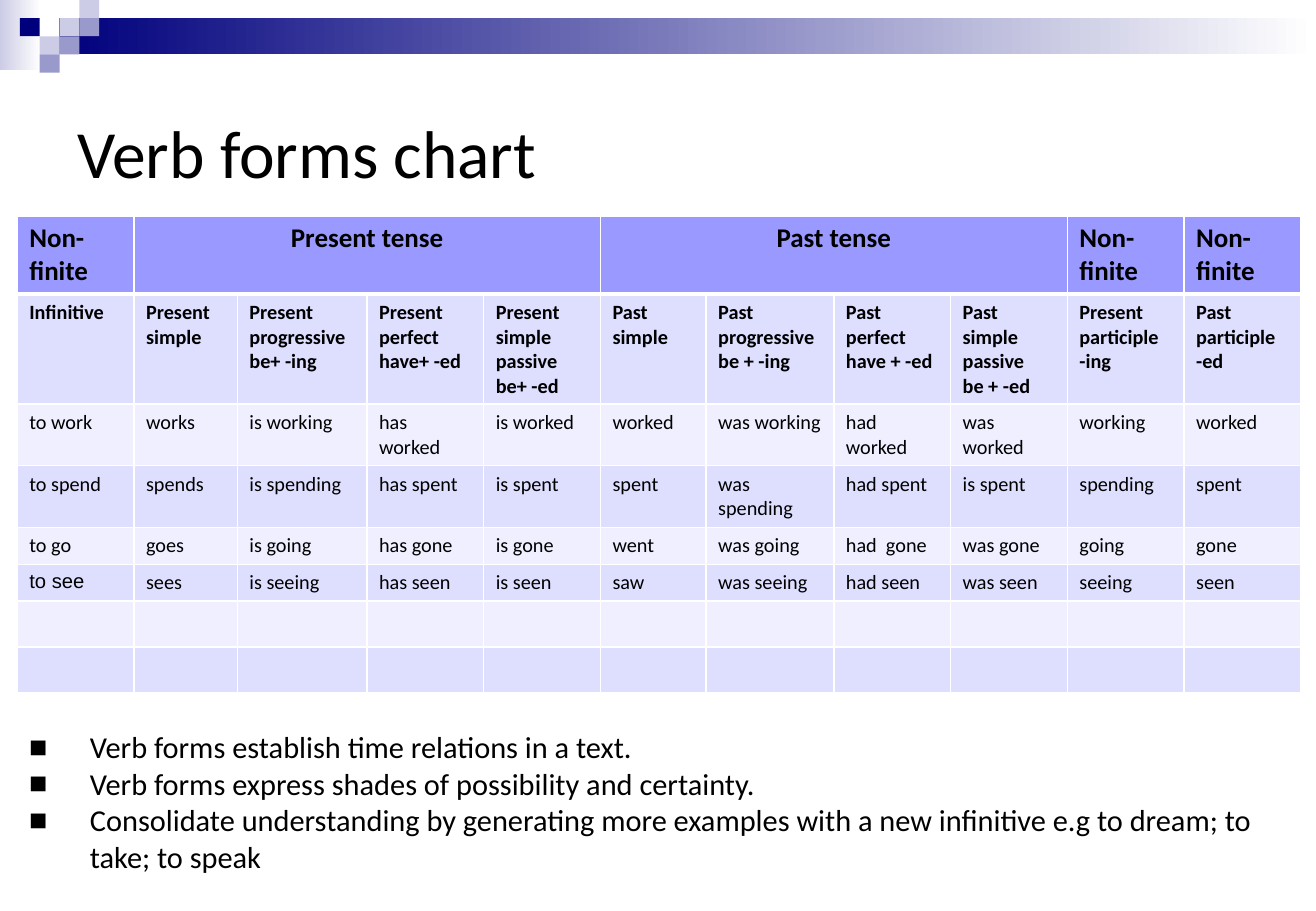
from lxml import etree
from pptx import Presentation
from pptx.dml.color import RGBColor
from pptx.enum import shapes, text
from pptx.oxml import ns
from pptx.util import Cm, Pt

COLORS = {
    "navy": "00007D", "lilac": "CCCCE6", "violet": "9999CC", "white": "FFFFFF",
    "black": "000000", "header": "9999FF", "dark band": "DEDEFF", "light band": "EFEFFF",
}


def rectangle(left, top, width, height, *fills):
    """Draw a borderless rectangle: one fill is solid, two make a gradient."""
    box = slide.shapes.add_shape(
        shapes.MSO_SHAPE.RECTANGLE, Cm(left), Cm(top), Cm(width), Cm(height))
    box.shadow.inherit = False
    box.line.fill.background()
    if len(fills) == 1:
        box.fill.solid()
        box.fill.fore_color.rgb = RGBColor.from_string(COLORS[fills[0]])
        return
    box.fill.gradient()
    box.fill.gradient_angle = 0
    for stop, name, position in zip(box.fill.gradient_stops, fills, (0, 1)):
        stop.color.rgb = RGBColor.from_string(COLORS[name])
        stop.position = position


def write(frame, wording, size, **formats):
    """Write one paragraph per line of the wording."""
    formats = {"name": "Calibri", "size": Pt(size), **formats}
    frame.word_wrap = True
    for number, line in enumerate(wording.split("\n")):
        paragraph = frame.paragraphs[0] if number == 0 else frame.add_paragraph()
        run = paragraph.add_run()
        run.text = line
        run.font.color.rgb = RGBColor.from_string(COLORS["black"])
        for attribute, value in formats.items():
            setattr(run.font, attribute, value)


deck = Presentation()
deck.slide_width, deck.slide_height = Cm(27.51), Cm(19.05)
slide = deck.slides.add_slide(deck.slide_layouts[6])

# Banner: two gradients and a mosaic of squares
rectangle(0, 0, 0.86, 1.47, "lilac", "white")
rectangle(1.24, 0.38, 26.27, 0.76, "navy", "white")
TILE_WIDTH, TILE_HEIGHT = 0.415, 0.38
mosaic = [(3, 1, "lilac"), (4, 0, "lilac"), (4, 1, "violet"), (2, 2, "lilac"),
          (1, 1, "navy"), (3, 2, "violet"), (2, 3, "violet")]
for column, row, color in mosaic:
    rectangle(column * TILE_WIDTH, row * TILE_HEIGHT, TILE_WIDTH, TILE_HEIGHT, color)

# Title
title = slide.shapes.add_textbox(Cm(1.37), Cm(1.27), Cm(24.77), Cm(3.81)).text_frame
title.vertical_anchor = text.MSO_ANCHOR.MIDDLE
write(title, "Verb forms chart", 40)

# Verb table
verb_forms = [
    ["Non-finite", "Present tense", "", "", "", "Past tense", "", "", "",
     "Non-finite", "Non-finite"],
    ["Infinitive", "Present simple", "Present progressive\nbe+ -ing",
     "Present perfect\nhave+ -ed", "Present simple passive\nbe+ -ed", "Past simple",
     "Past progressive\nbe + -ing", "Past perfect\nhave + -ed",
     "Past simple passive\nbe + -ed", "Present participle\n-ing", "Past participle\n-ed"],
    ["to work", "works", "is working", "has worked", "is worked", "worked",
     "was working", "had worked", "was worked", "working", "worked"],
    ["to spend", "spends", "is spending", "has spent", "is spent", "spent",
     "was spending", "had spent", "is spent", "spending", "spent"],
    ["to go", "goes", "is going", "has gone", "is gone", "went",
     "was going", "had  gone", "was gone", "going", "gone"],
    ["to see", "sees", "is seeing", "has seen", "is seen", "saw",
     "was seeing", "had seen", "was seen", "seeing", "seen"],
    [""] * 11,
    [""] * 11,
]
column_widths = [2.44, 2.16, 2.71, 2.44, 2.44, 2.21, 2.67, 2.44, 2.44, 2.44, 2.44]
row_heights = [1.63, 2.3, 1.29, 1.29, 0.77, 0.77, 0.96, 0.96]
verbs = slide.shapes.add_table(
    len(row_heights), len(column_widths), Cm(0.36), Cm(4.52),
    Cm(sum(column_widths)), Cm(sum(row_heights))).table
for column, width in zip(verbs.columns, column_widths):
    column.width = Cm(width)
for row, height in zip(verbs.rows, row_heights):
    row.height = Cm(height)
for first in (1, 5):
    verbs.cell(0, first).merge(verbs.cell(0, first + 3))

for r, forms in enumerate(verb_forms):
    band = "header" if r == 0 else "dark band" if r % 2 else "light band"
    for c, form in enumerate(forms):
        cell = verbs.cell(r, c)
        # White borders, thicker under the header
        properties = cell._tc.get_or_add_tcPr()
        for side in "LRTB":
            thick = (r, side) in ((0, "B"), (1, "T"))
            line = etree.SubElement(properties, ns.qn(f"a:ln{side}"), w=str(Pt(3 if thick else 1)))
            solid = etree.SubElement(line, ns.qn("a:solidFill"))
            etree.SubElement(solid, ns.qn("a:srgbClr"), val=COLORS["white"])
        cell.fill.solid()
        cell.fill.fore_color.rgb = RGBColor.from_string(COLORS[band])
        if form:
            write(cell.text_frame, form, 16 if r == 0 else 12, bold=r < 2,
                  name="Arial" if form == "to see" else "Calibri")
            if "tense" in form:
                cell.text_frame.paragraphs[0].alignment = text.PP_ALIGN.CENTER
        else:
            # Keep blank rows from growing
            etree.SubElement(cell.text_frame.paragraphs[0]._p, ns.qn("a:endParaRPr"), sz="1200")

# Teaching points
points = slide.shapes.add_textbox(Cm(0.36), Cm(15.11), Cm(26.8), Cm(4.11)).text_frame
write(points, "Verb forms establish time relations in a text.\n"
              "Verb forms express shades of possibility and certainty.\n"
              "Consolidate understanding by generating more examples with a new infinitive "
              "e.g to dream; to take; to speak", 18)
for point in points.paragraphs:
    indents = point._p.get_or_add_pPr()
    indents.set("marL", str(Cm(1.27)))
    indents.set("indent", str(-Cm(1.27)))
    etree.SubElement(indents, ns.qn("a:buFont"), typeface="Arial")
    etree.SubElement(indents, ns.qn("a:buChar"), char="■")

deck.save("out.pptx")
